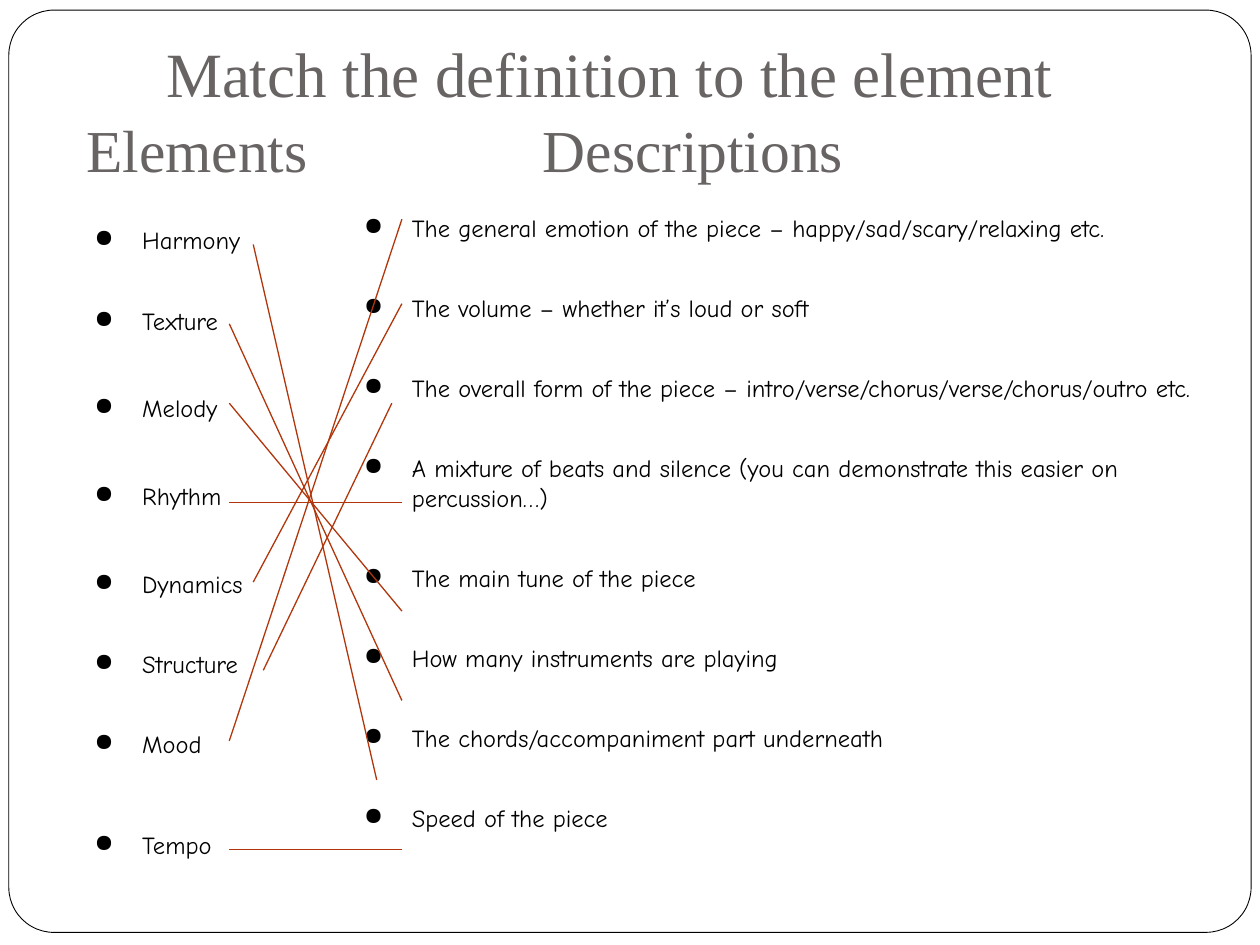
from lxml.etree import SubElement
from pptx import Presentation
from pptx.dml.color import RGBColor
from pptx.enum.shapes import MSO_CONNECTOR, MSO_SHAPE
from pptx.enum.text import MSO_ANCHOR
from pptx.oxml.ns import qn
from pptx.util import Inches, Pt

HEADING_FONT, LIST_FONT = "Times New Roman", "Comic Neue"
GREY, BLACK, WHITE, RUST = "696464", "000000", "FFFFFF", "B1360B"

# Each item has the space above it in points
ELEMENTS = [
    ("Harmony", 0), ("Texture", 29), ("Melody", 33.3), ("Rhythm", 33.3),
    ("Dynamics", 33.3), ("Structure", 29), ("Mood", 29), ("Tempo", 41),
]
DESCRIPTIONS = [
    "The general emotion of the piece – happy/sad/scary/relaxing etc.",
    "The volume – whether it’s loud or soft",
    "The overall form of the piece – intro/verse/chorus/verse/chorus/outro etc.",
    "A mixture of beats and silence (you can demonstrate this easier on percussion…)",
    "The main tune of the piece",
    "How many instruments are playing",
    "The chords/accompaniment part underneath",
    "Speed of the piece",
]
# Start and end of the line from each element to its description
MATCHES = [
    (2.01, 1.94, 2.99, 6.19), (1.82, 2.57, 3.19, 5.56),
    (1.82, 3.2, 3.19, 4.85), (1.82, 3.99, 3.19, 3.99),
    (2.01, 4.62, 3.19, 2.41), (2.09, 5.32, 3.11, 3.2),
    (1.82, 5.88, 3.19, 1.74), (1.82, 6.74, 3.19, 6.74),
]


def color(value):
    return RGBColor.from_string(value)


def set_all(target, values):
    for name, value in values.items():
        setattr(target, name, value)


def add_frame(page):
    frame = page.shapes.add_shape(
        MSO_SHAPE.ROUNDED_RECTANGLE,
        *map(Inches, (0.07, 0.08, 9.86, 7.32)))
    frame.adjustments[0] = 0.049
    frame.shadow.inherit = False
    frame.fill.solid()
    frame.fill.fore_color.rgb = color(WHITE)
    frame.line.color.rgb = color(BLACK)
    frame.line.width = Pt(0.5)


def add_box(page, place, **values):
    box = page.shapes.add_textbox(*map(Inches, place))
    set_all(box.text_frame, {"word_wrap": True, **values})
    return box.text_frame


def write(para, text, font, size, text_color):
    span = para.add_run()
    span.text = text
    set_all(span.font, {"name": font, "size": Pt(size)})
    span.font.color.rgb = color(text_color)


def add_heading(page, text, place, size, line_spacing=1.0):
    box = add_box(page, place, vertical_anchor=MSO_ANCHOR.BOTTOM,
                  margin_bottom=Inches(0.1))
    para = box.paragraphs[0]
    para.line_spacing = line_spacing
    write(para, text, HEADING_FONT, size, GREY)


def add_bullet(para):
    properties = para._p.get_or_add_pPr()
    indent = Inches(0.38)
    properties.set("marL", str(indent))
    properties.set("indent", str(-indent))
    SubElement(properties, qn("a:buChar")).set("char", "●")


def add_list(page, items, place):
    box = add_box(page, place)
    for index, (text, gap) in enumerate(items):
        para = box.add_paragraph() if index else box.paragraphs[0]
        para.space_before = Pt(gap)
        add_bullet(para)
        write(para, text, LIST_FONT, 14, BLACK)


def add_match(page, ends):
    match = page.shapes.add_connector(MSO_CONNECTOR.STRAIGHT, *map(Inches, ends))
    match.line.color.rgb = color(RUST)
    match.line.width = Pt(0.75)
    SubElement(match._element.spPr, qn("a:effectLst"))


def main():
    deck = Presentation()
    set_all(deck, {"slide_width": Inches(10), "slide_height": Inches(7.5)})
    page = deck.slides.add_slide(deck.slide_layouts[6])
    add_frame(page)

    # Headings
    add_heading(page, "Match the definition to the element",
                (1.22, 0.18, 8.5, 0.79), 36)
    add_heading(page, "Elements", (0.59, 0.95, 2.2, 0.61), 34, 0.8)
    add_heading(page, "Descriptions", (4.21, 0.95, 3.39, 0.61), 34, 0.8)

    # The two lists, with even gaps between descriptions
    add_list(page, ELEMENTS, (0.65, 1.74, 2.35, 5.76))
    descriptions = [(text, 29 if index else 0)
                    for index, text in enumerate(DESCRIPTIONS)]
    add_list(page, descriptions, (2.79, 1.64, 7.21, 5.95))

    # Answer lines
    for ends in MATCHES:
        add_match(page, ends)
    deck.save("out.pptx")


if __name__ == "__main__":
    main()
